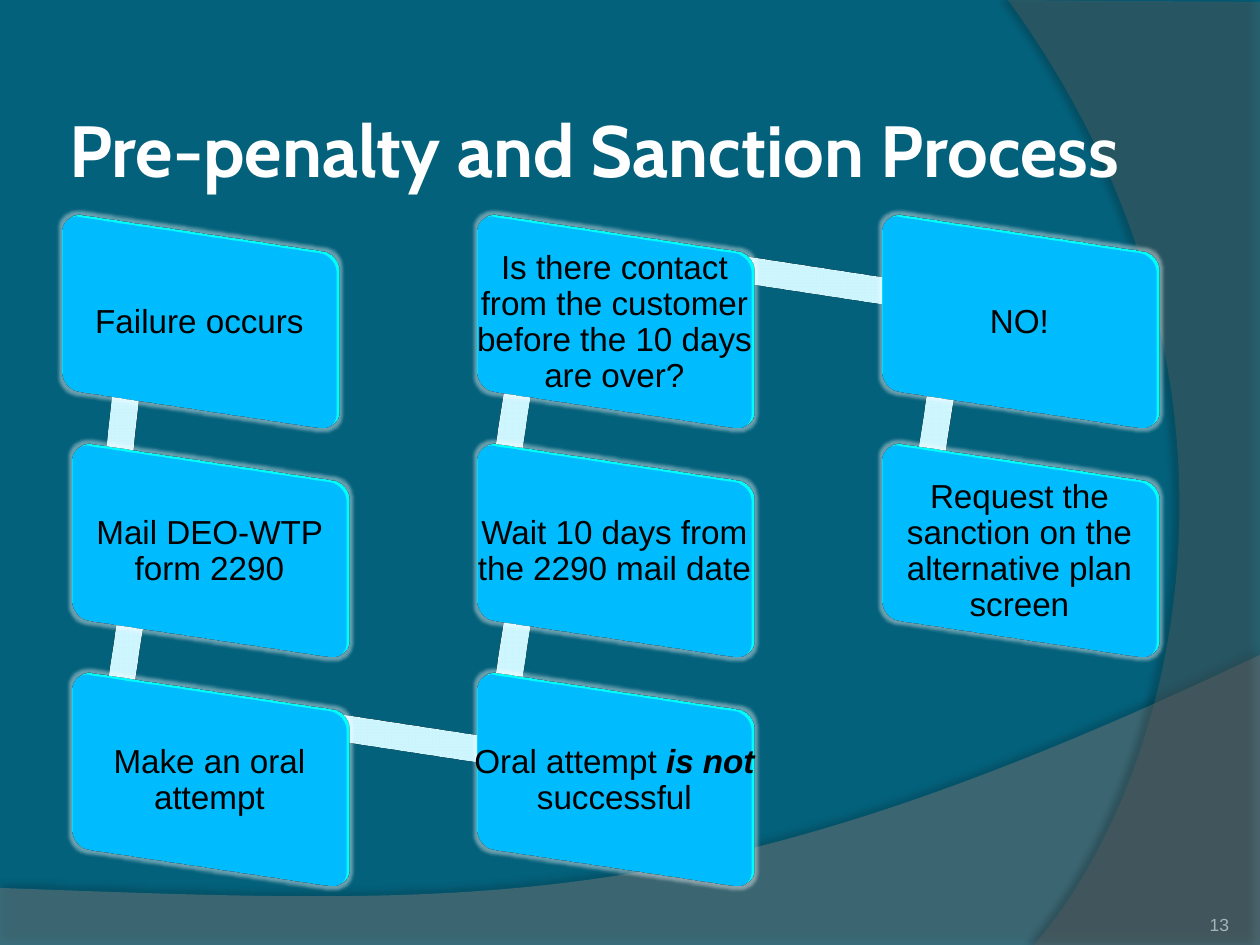
from lxml import etree
from pptx import Presentation
from pptx.dml.color import RGBColor as RGB
from pptx.enum.shapes import MSO_SHAPE as Preset
from pptx.enum.text import MSO_ANCHOR as Anchor, MSO_AUTO_SIZE as AutoSize, PP_ALIGN as Align
from pptx.oxml import parse_xml
from pptx.oxml.ns import nsdecls, qn
from pptx.util import Pt

PX = 914400 / 126
COLORS = {
    "back": "04617B", "wave": "7F7F7F", "arc": "5E5E5E", "link": "ABCCE9",
    "face": "009DD9", "white": "FFFFFF", "black": "000000", "number": "A2B5B8",
}


def write(box, runs, size, color, font="Arial", bold=False, align=Align.CENTER,
          anchor=Anchor.MIDDLE, inset=0, spacing=1.0):
    frame = box.text_frame
    frame.word_wrap = True
    frame.auto_size = AutoSize.NONE
    frame.vertical_anchor = anchor
    frame.margin_left = frame.margin_right = round(inset * PX)
    frame.margin_top = frame.margin_bottom = round(inset * PX)
    para = frame.paragraphs[0]
    para.alignment = align
    para.line_spacing = spacing
    for text, strong in runs:
        span = para.add_run()
        span.text = text
        span.font.name = font
        span.font.size = Pt(size)
        span.font.bold = bold or strong
        span.font.italic = strong
        span.font.color.rgb = RGB.from_string(COLORS[color])


def paint(shape, fill, effect="", solid=None):
    shape.fill.solid()
    shape.fill.fore_color.rgb = RGB.from_string(COLORS[fill])
    shape.line.fill.background()
    parts = [f"<a:effectLst {nsdecls('a')}>{effect}</a:effectLst>"]
    if solid:
        parts.append(f'<a:scene3d {nsdecls("a")}>'
                     '<a:camera prst="isometricOffAxis2Left" zoom="95000"/>'
                     '<a:lightRig rig="flat" dir="t"/></a:scene3d>')
        parts.append(f'<a:sp3d {nsdecls("a")} {solid}/>')
    for part in parts:
        shape.element.spPr.append(parse_xml(part))


deck = Presentation()
deck.slide_width, deck.slide_height = round(1260 * PX), round(945 * PX)
page = deck.slides.add_slide(deck.slide_layouts[5])
page.background.fill.solid()
page.background.fill.fore_color.rgb = RGB.from_string(COLORS["back"])

SWOOSHES = [
    ("wave", 45, [(0, 888), (0, 945), (1260, 945), (1260, 655)],
     [(704, 919), (493, 906), (0, 888)], (0, 655), 35, 44450, 270),
    ("arc", 40, [(1260, 2), (1260, 945), (1034, 945)],
     [(1178, 780), (1283, 378), (1008, 0)], (1008, 0), 45, 50800, 180),
]
for fill, opacity, corners, curve, origin, shade, distance, angle in SWOOSHES:
    builder = page.shapes.build_freeform(*corners[0], scale=PX)
    builder.add_line_segments(corners[1:] + curve[-1:], close=True)
    swoosh = builder.convert_to_shape()
    last_line = swoosh.element.spPr.findall(".//" + qn("a:lnTo"))[-1]
    bend = etree.Element(qn("a:cubicBezTo"))
    for x, y in curve:
        etree.SubElement(bend, qn("a:pt"), x=str(x - origin[0]), y=str(y - origin[1]))
    last_line.getparent().replace(last_line, bend)
    paint(swoosh, fill, effect=(
        f'<a:outerShdw blurRad="50800" dist="{distance}" dir="{angle * 60000}">'
        f'<a:srgbClr val="{COLORS["black"]}"><a:alpha val="{shade * 1000}"/>'
        '</a:srgbClr></a:outerShdw>'))
    color = swoosh.element.spPr.find(qn("a:solidFill")).find(qn("a:srgbClr"))
    etree.SubElement(color, qn("a:alpha"), val=str(opacity * 1000))

title = page.shapes.title
title.left, title.top, title.width, title.height = (
    round(n * PX) for n in (63, 98, 1134, 102))
write(title, [("Pre-penalty and Sanction Process", False)], 41.4, "white",
      font="Cabin", bold=True, align=Align.LEFT, inset=6)
title.element.getparent().append(title.element)

GLOW = (f'<a:glow rad="50800"><a:srgbClr val="{COLORS["white"]}">'
        '<a:alpha val="40000"/></a:srgbClr></a:glow>')
WIDTH, HEIGHT = 305, 183
DOWN, ACROSS = 227, 403
STAGES = [
    (0, 0, DOWN, 87.5, [("Failure occurs", False)]),
    (0, 1, DOWN, 90, [("Mail DEO-WTP form 2290", False)]),
    (0, 2, ACROSS, 0, [("Make an oral attempt", False)]),
    (1, 2, DOWN, 270,
     [("Oral attempt ", False), ("is not ", True), ("successful", False)]),
    (1, 1, DOWN, 270, [("Wait 10 days from the 2290 mail date", False)]),
    (1, 0, ACROSS, 0,
     [("Is there contact from the customer before the 10 days are over?", False)]),
    (2, 0, DOWN, 90, [("NO!", False)]),
    (2, 1, 0, 0, [("Request the sanction on the alternative plan screen", False)]),
]
for column, row, length, turn, runs in STAGES:
    left = 47 if column == row == 0 else 57 + 405 * column
    top = 231 + 229 * row
    if length:
        middle = left + 264 if length == ACROSS else left + 65
        height = top + 45 if length == ACROSS else top + 160
        if turn == 270:
            height -= 229
        if turn == 87.5:
            middle += 5
        link = page.shapes.add_shape(Preset.RECTANGLE, *(
            round(n * PX) for n in (middle - length / 2, height - 14, length, 28)))
        link.rotation = turn
        paint(link, "link", solid='z="-182000" extrusionH="12700" prstMaterial="matte"')
    area = [round(n * PX) for n in (left, top, WIDTH, HEIGHT)]
    card = page.shapes.add_shape(Preset.ROUNDED_RECTANGLE, *area)
    card.adjustments[0] = 0.1
    paint(card, "face", effect=GLOW, solid='extrusionH="50600" prstMaterial="matte"')
    label = page.shapes.add_textbox(*area)
    write(label, runs, 19, "black", inset=10, spacing=0.9)

number = page.shapes.add_textbox(*(round(n * PX) for n in (1124, 885, 105, 50)))
write(number, [("13", False)], 10, "number", align=Align.RIGHT, anchor=Anchor.BOTTOM)

deck.save("out.pptx")
